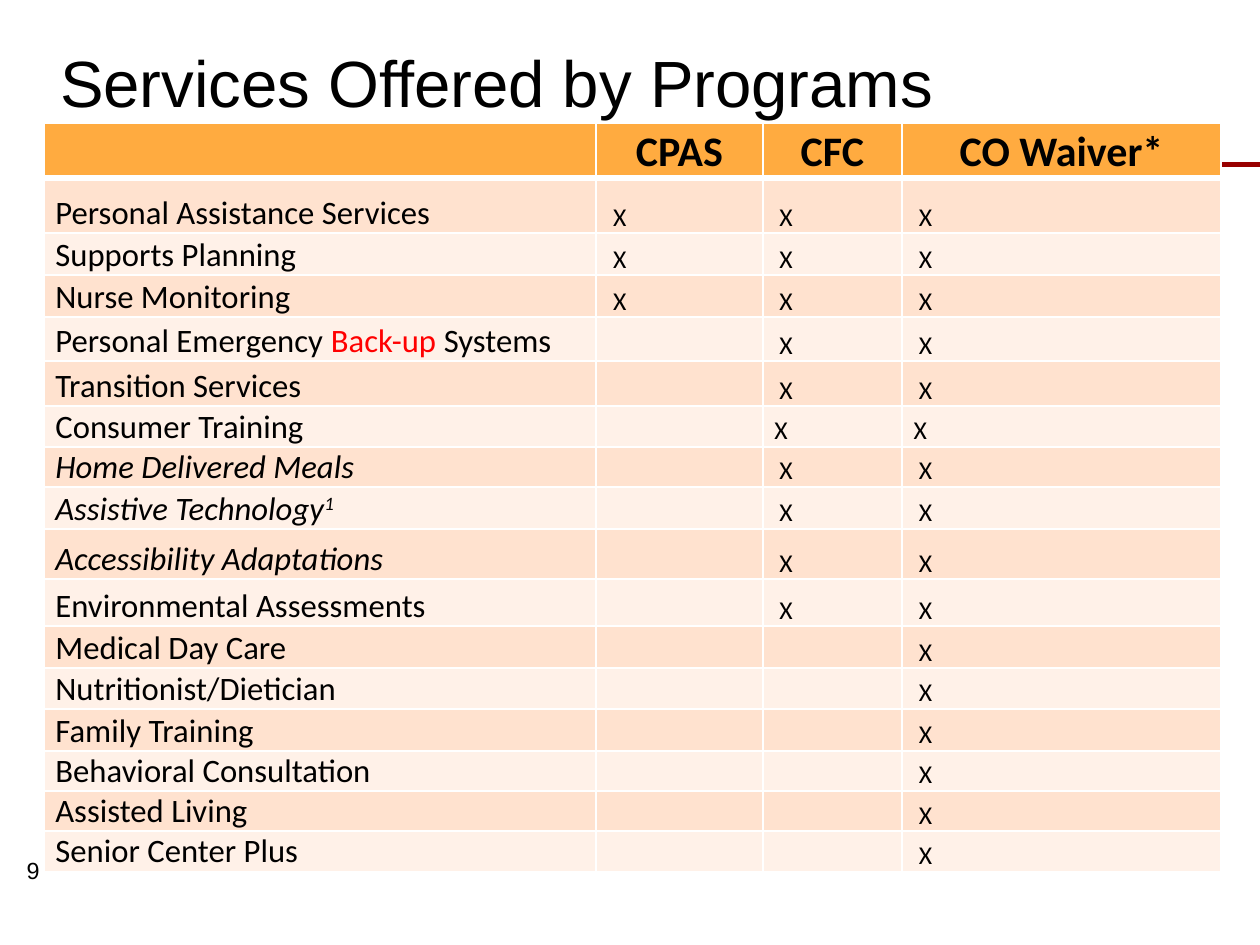
from lxml import etree
from pptx import Presentation
from pptx.dml.color import RGBColor
from pptx.enum import shapes, text
from pptx.oxml.ns import qn
from pptx.util import Inches, Pt

BLACK = RGBColor(0x00, 0x00, 0x00)
RED = RGBColor(0xFF, 0x00, 0x00)
WHITE = RGBColor(0xFF, 0xFF, 0xFF)
MAROON = RGBColor(0x98, 0x00, 0x00)
ORANGE = RGBColor(0xFF, 0xAB, 0x40)
PEACH = RGBColor(0xFF, 0xE2, 0xCF)
PALE = RGBColor(0xFF, 0xF1, 0xE8)

PROGRAMS = ["CPAS", "CFC", "CO Waiver*"]
# Service, number of programs offering it (counted from the right), row height
SERVICES = [
    ("Personal Assistance Services", 3, 0.33),
    ("Supports Planning", 3, 0.25),
    ("Nurse Monitoring", 3, 0.25),
    ("Personal Emergency Back-up Systems", 2, 0.26),
    ("Transition Services", 2, 0.27),
    ("Consumer Training", 2, 0.24),
    ("Home Delivered Meals", 2, 0.24),
    ("Assistive Technology1", 2, 0.25),
    ("Accessibility Adaptations", 2, 0.3),
    ("Environmental Assessments", 2, 0.28),
    ("Medical Day Care", 1, 0.25),
    ("Nutritionist/Dietician", 1, 0.24),
    ("Family Training", 1, 0.25),
    ("Behavioral Consultation", 1, 0.24),
    ("Assisted Living", 1, 0.24),
    ("Senior Center Plus", 1, 0.24),
]
ITALIC_SERVICES = {"Home Delivered Meals", "Assistive Technology1", "Accessibility Adaptations"}
SPLIT_NAMES = {
    "Personal Emergency Back-up Systems": ["Personal Emergency ", "Back-up", " Systems"],
    "Assistive Technology1": ["Assistive Technology", "1"],
}
COLUMN_WIDTHS = [3.29, 0.99, 0.83, 1.9]
HEADER_HEIGHT = 0.33


def add_text(para, words, size=14, face="Calibri", color=BLACK, bold=False, italic=False, raised=False):
    span = para.add_run()
    span.text = words
    span.font.size = Pt(size)
    span.font.name = face
    span.font.color.rgb = color
    span.font.bold = bold
    span.font.italic = italic
    if raised:
        span.font._element.set("baseline", "30000")


def style_cell(cell, fill, bottom_width=1):
    """Give a cell its margins, anchor, white borders and fill."""
    cell.margin_left = cell.margin_right = Inches(0.07)
    cell.margin_top = cell.margin_bottom = 0
    cell.vertical_anchor = text.MSO_ANCHOR.BOTTOM
    properties = cell._tc.get_or_add_tcPr()
    for side, width in (("L", 1), ("R", 1), ("T", 1), ("B", bottom_width)):
        border = etree.SubElement(properties, qn(f"a:ln{side}"), w=str(Pt(width)))
        solid = etree.SubElement(border, qn("a:solidFill"))
        etree.SubElement(solid, qn("a:srgbClr"), val=str(WHITE))
    cell.fill.solid()
    cell.fill.fore_color.rgb = fill


deck = Presentation()
deck.slide_width = Inches(7.5)
deck.slide_height = deck.slide_width * 3 // 4
page = deck.slides.add_slide(deck.slide_layouts[6])

rule = page.shapes.add_connector(
    shapes.MSO_CONNECTOR.STRAIGHT, Inches(1.85), Inches(0.98), Inches(7.5), Inches(0.98))
rule.line.color.rgb = MAROON
rule.line.width = Pt(2.25)
etree.SubElement(rule._element.spPr, qn("a:effectLst"))

title = page.shapes.add_textbox(Inches(0.26), Inches(0.11), Inches(6.99), Inches(0.75)).text_frame
title.word_wrap = True
title.vertical_anchor = text.MSO_ANCHOR.MIDDLE
add_text(title.paragraphs[0], "Services Offered by Programs", size=28, face="Arial")

number = page.shapes.add_textbox(Inches(0.06), Inches(5.05), Inches(0.45), Inches(0.57)).text_frame
number.word_wrap = True
add_text(number.paragraphs[0], "9", size=10, face="Arial")

heights = [HEADER_HEIGHT] + [height for _, _, height in SERVICES]
table = page.shapes.add_table(
    len(heights), len(COLUMN_WIDTHS), Inches(0.26), Inches(0.73),
    Inches(sum(COLUMN_WIDTHS)), Inches(sum(heights))).table
for column, width in zip(table.columns, COLUMN_WIDTHS):
    column.width = Inches(width)
for row, height in zip(table.rows, heights):
    row.height = Inches(height)

for index in range(len(COLUMN_WIDTHS)):
    cell = table.cell(0, index)
    style_cell(cell, ORANGE, bottom_width=3)
    if index > 0:
        para = cell.text_frame.paragraphs[0]
        para.alignment = text.PP_ALIGN.CENTER
        add_text(para, PROGRAMS[index - 1], size=18, bold=True)

for row_index, (service, offered, _) in enumerate(SERVICES, start=1):
    for index in range(len(COLUMN_WIDTHS)):
        cell = table.cell(row_index, index)
        style_cell(cell, PEACH if row_index % 2 else PALE)
        para = cell.text_frame.paragraphs[0]
        if index == 0:
            for part in SPLIT_NAMES.get(service, [service]):
                add_text(para, part, color=RED if part == "Back-up" else BLACK,
                         italic=service in ITALIC_SERVICES, raised=part == "1")
        elif index > len(PROGRAMS) - offered:
            if service != "Consumer Training":
                cell.margin_left = Inches(0.1)
            add_text(para, "X", size=11)
        else:
            # Keeps an empty cell from stretching its row
            etree.SubElement(para._p, qn("a:endParaRPr"), sz="1100")

deck.save("out.pptx")
